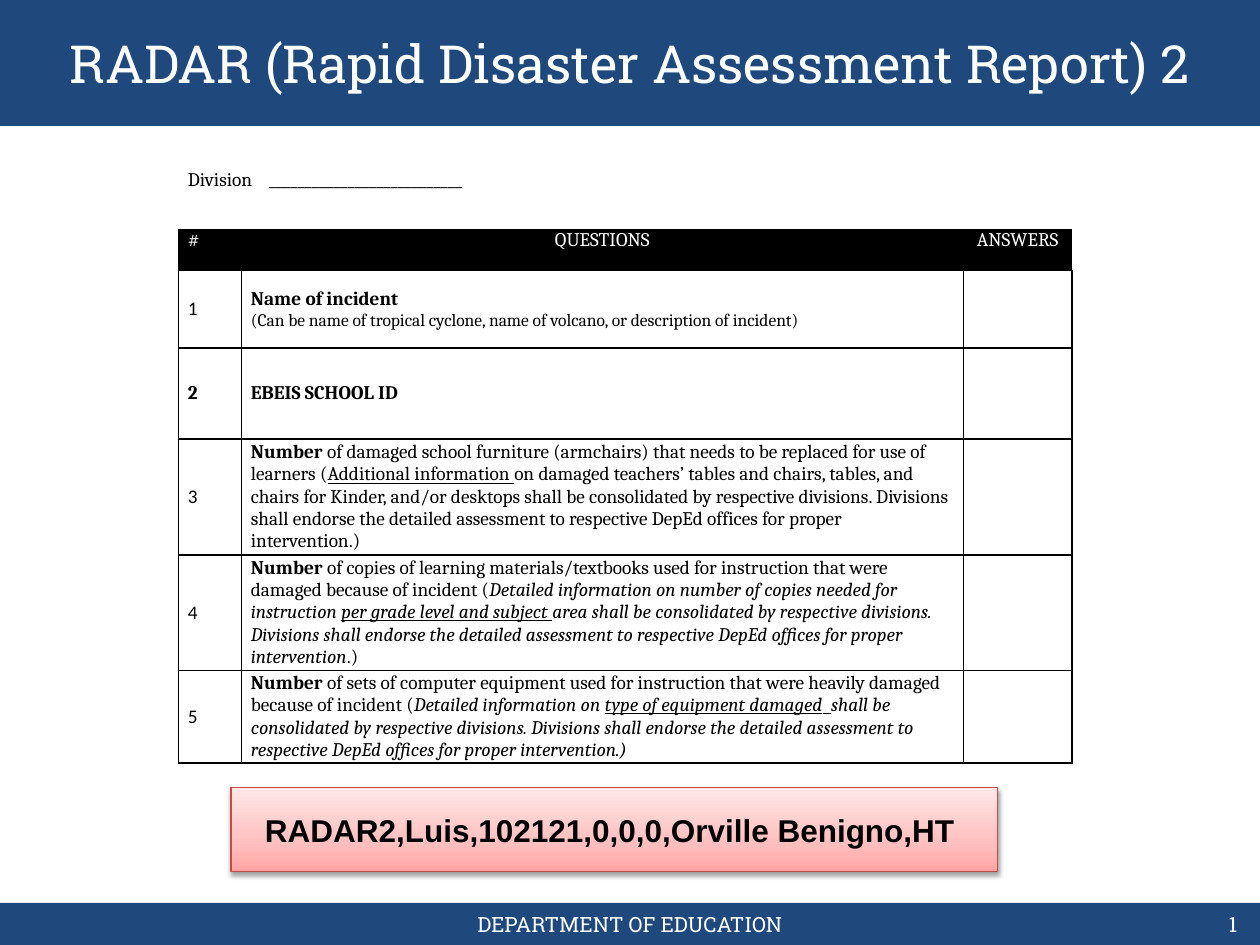
"""Build the RADAR 2 questionnaire slide with its sample text message."""
import copy

import pptx
import pptx.dml.color
import pptx.enum.shapes
import pptx.enum.text
import pptx.oxml
import pptx.oxml.ns
import pptx.util
from lxml import etree

Pt = pptx.util.Pt
ALIGN = pptx.enum.text.PP_ALIGN
MIDDLE = pptx.enum.text.MSO_ANCHOR.MIDDLE
RECTANGLE = pptx.enum.shapes.MSO_SHAPE.RECTANGLE
qn = pptx.oxml.ns.qn

COLORS = {
    "navy": "1F497D", "white": "FFFFFF", "black": "000000", "red": "BF4C48",
    "rose": "FFA6A5", "pink": "FFC0BF", "blush": "FFE7E7",
}
SLAB = "Roboto Slab"
COLUMN_WIDTHS = [36, 412.5, 62]
ROW_HEIGHTS = [47, 23.5, 44.5, 52, 63.5, 63.5, 51]
HEADERS = [("#", ALIGN.LEFT), ("QUESTIONS", ALIGN.CENTER), ("ANSWERS", ALIGN.CENTER)]
QUESTIONS = [
    [[("Name of incident", "b")],
     [("(Can be name of tropical cyclone, name of volcano, or description of incident)", "s")]],
    [[("EBEIS SCHOOL ID", "b")]],
    [[("Number", "b"),
      (" of damaged school furniture (armchairs) that needs to be replaced for use of learners (", ""),
      ("Additional information ", "u"),
      ("on damaged teachers’ tables and chairs, tables, and chairs for Kinder, and/or desktops "
       "shall be consolidated by respective divisions. Divisions shall endorse the detailed "
       "assessment to respective DepEd offices for proper intervention.)", "")]],
    [[("Number ", "b"),
      ("of copies of learning materials/textbooks used for instruction that were damaged "
       "because of incident (", ""),
      ("Detailed information on number of copies needed for instruction ", "i"),
      ("per grade level and subject ", "iu"),
      ("area shall be consolidated by respective divisions. Divisions shall endorse the "
       "detailed assessment to respective DepEd offices for proper intervention", "i"),
      (".)", "")]],
    [[("Number", "b"),
      (" of sets of computer equipment used for instruction that were heavily damaged "
       "because of incident (", ""),
      ("Detailed information on ", "i"),
      ("type of equipment damaged", "iu"),
      (" ", "u"),
      (" ", "iu"),
      ("shall be consolidated by respective divisions. Divisions shall endorse the detailed "
       "assessment to respective DepEd offices for proper intervention.)", "i")]],
]


def rgb(name):
    """Return the named colour."""
    return pptx.dml.color.RGBColor.from_string(COLORS[name])


def format_font(font, name, size, color):
    """Set typeface, size and colour of a font."""
    font.name, font.size = name, Pt(size)
    font.color.rgb = rgb(color)


def add_run(paragraph, text, name="Cambria", size=11, color="black", style=""):
    """Add a run; style letters are b(old), i(talic), u(nderline), s(mall)."""
    run = paragraph.add_run()
    run.text = text
    format_font(run.font, name, 10 if "s" in style else size, color)
    run.font.bold = "b" in style
    run.font.italic = "i" in style
    run.font.underline = "u" in style


def add_bar(slide, top, height):
    """Add a full-width navy bar."""
    bar = slide.shapes.add_shape(RECTANGLE, 0, Pt(top), Pt(720), Pt(height))
    bar.shadow.inherit = False
    bar.fill.solid()
    bar.fill.fore_color.rgb = rgb("navy")
    bar.line.fill.background()


def add_footer(slide, left, width, alignment):
    """Add a text box in the bottom bar and return its paragraph."""
    box = slide.shapes.add_textbox(Pt(left), Pt(516), Pt(width), Pt(24))
    box.text_frame.word_wrap = True
    box.text_frame.vertical_anchor = MIDDLE
    paragraph = box.text_frame.paragraphs[0]
    paragraph.alignment = alignment
    return paragraph


def add_slide_number(paragraph, number):
    """Add a slide number field showing the given number."""
    field = etree.SubElement(paragraph._p, qn("a:fld"), type="slidenum",
                             id="{B6F15528-21DE-4FAA-801E-634DDDAF4B2B}")
    properties = etree.SubElement(field, qn("a:rPr"), lang="en-US", sz="1200")
    fill = etree.SubElement(properties, qn("a:solidFill"))
    etree.SubElement(fill, qn("a:srgbClr"), val=COLORS["white"])
    etree.SubElement(properties, qn("a:latin"), typeface=SLAB)
    etree.SubElement(field, qn("a:t")).text = str(number)


def set_borders(cell, sides):
    """Draw black borders on the given sides and clear the others."""
    properties = cell._tc.get_or_add_tcPr()
    for index, side in enumerate("LRTB"):
        line = etree.Element(qn(f"a:ln{side}"), w=str(Pt(1)))
        if side in sides:
            fill = etree.SubElement(line, qn("a:solidFill"))
            etree.SubElement(fill, qn("a:srgbClr"), val=COLORS["black"])
        else:
            etree.SubElement(line, qn("a:noFill"))
        properties.insert(index, line)


def format_cell(cell, row):
    """Set insets, fill and borders of a cell by its row."""
    cell.margin_left = cell.margin_right = Pt(5.4)
    cell.margin_top = cell.margin_bottom = 0
    if row == 1:
        cell.fill.solid()
        cell.fill.fore_color.rgb = rgb("black")
    else:
        cell.fill.background()
    if row > 1:
        cell.vertical_anchor = MIDDLE
    set_borders(cell, ["", "B"][row] if row < 2 else "LRTB")


def fill_division(cell):
    """Write the division label with its blank line at a tab stop."""
    cell.margin_top = Pt(12.8)
    paragraph = cell.text_frame.paragraphs[0]
    add_run(paragraph, "Division\t___________________________")
    tabs = etree.SubElement(paragraph._p.get_or_add_pPr(), qn("a:tabLst"))
    etree.SubElement(tabs, qn("a:tab"), pos=str(Pt(46.3)), algn="l")


def add_questionnaire(slide):
    """Add the table of numbered questions."""
    frame = slide.shapes.add_table(len(ROW_HEIGHTS), len(COLUMN_WIDTHS), Pt(102), Pt(84),
                                   Pt(sum(COLUMN_WIDTHS)), Pt(sum(ROW_HEIGHTS)))
    table = frame.table
    table.first_row = table.horz_banding = False
    style = table._tbl.find(".//" + qn("a:tableStyleId"))
    style.text = "{2D5ABB26-0587-4C30-8999-92F81FD0307C}"
    for column, width in zip(table.columns, COLUMN_WIDTHS):
        column.width = Pt(width)
    for index, (row, height) in enumerate(zip(table.rows, ROW_HEIGHTS)):
        row.height = Pt(height)
        for cell in row.cells:
            format_cell(cell, index)
    table.cell(0, 0).merge(table.cell(0, 1))
    fill_division(table.cell(0, 0))
    for column, (text, alignment) in enumerate(HEADERS):
        paragraph = table.cell(1, column).text_frame.paragraphs[0]
        paragraph.alignment = alignment
        add_run(paragraph, text, color="white")
    for number, paragraphs in enumerate(QUESTIONS, 1):
        label = table.cell(number + 1, 0).text_frame.paragraphs[0]
        if number == 2:
            add_run(label, str(number), style="b")
        else:
            add_run(label, str(number), "Calibri")
        text_frame = table.cell(number + 1, 1).text_frame
        for index, runs in enumerate(paragraphs):
            paragraph = text_frame.add_paragraph() if index else text_frame.paragraphs[0]
            for text, style in runs:
                add_run(paragraph, text, style=style)


def add_sample_message(slide):
    """Add the shaded box with the sample message."""
    box = slide.shapes.add_shape(RECTANGLE, Pt(132), Pt(450), Pt(438), Pt(48))
    box.fill.gradient()
    box.fill.gradient_angle = 90
    stops = box.element.find(".//" + qn("a:gsLst"))
    stops.append(copy.deepcopy(stops[-1]))
    shades = [(0, "rose"), (0.35, "pink"), (1, "blush")]
    for stop, (position, color) in zip(box.fill.gradient_stops, shades):
        stop.position = position
        stop.color.rgb = rgb(color)
    box.line.color.rgb = rgb("red")
    box.line.width = Pt(0.75)
    box.shadow.inherit = False
    effects = box.element.spPr.find(qn("a:effectLst"))
    shadow = etree.SubElement(effects, qn("a:outerShdw"), blurRad=str(Pt(3.1)),
                              dist=str(Pt(1.6)), dir="5400000", rotWithShape="0")
    color = etree.SubElement(shadow, qn("a:srgbClr"), val=COLORS["black"])
    etree.SubElement(color, qn("a:alpha"), val="38000")
    box.text_frame.vertical_anchor = MIDDLE
    paragraph = box.text_frame.paragraphs[0]
    paragraph.alignment = ALIGN.CENTER
    add_run(paragraph, "RADAR2,Luis,102121,0,0,0,Orville Benigno,HT ", "Arial", 18, style="b")


def set_title(slide):
    """Place the title over the top bar."""
    title = slide.shapes.title
    title.left, title.top, title.width, title.height = 0, 0, Pt(720), Pt(72)
    title.text_frame.vertical_anchor = MIDDLE
    paragraph = title.text_frame.paragraphs[0]
    paragraph.alignment = ALIGN.CENTER
    add_run(paragraph, "RADAR (Rapid Disaster Assessment Report) 2", SLAB, 30, "white")
    title.element.getparent().append(title.element)


def main():
    """Build and save the presentation."""
    presentation = pptx.Presentation()
    presentation.slide_width, presentation.slide_height = Pt(720), Pt(540)
    slide = presentation.slides.add_slide(presentation.slide_layouts[5])
    add_bar(slide, 516, 24)
    add_bar(slide, 0, 72)
    add_run(add_footer(slide, 246, 228, ALIGN.CENTER), "DEPARTMENT OF EDUCATION", SLAB, 12, "white")
    add_questionnaire(slide)
    add_slide_number(add_footer(slide, 546, 168, ALIGN.RIGHT), 26)
    add_sample_message(slide)
    set_title(slide)
    presentation.save("out.pptx")


if __name__ == "__main__":
    main()
